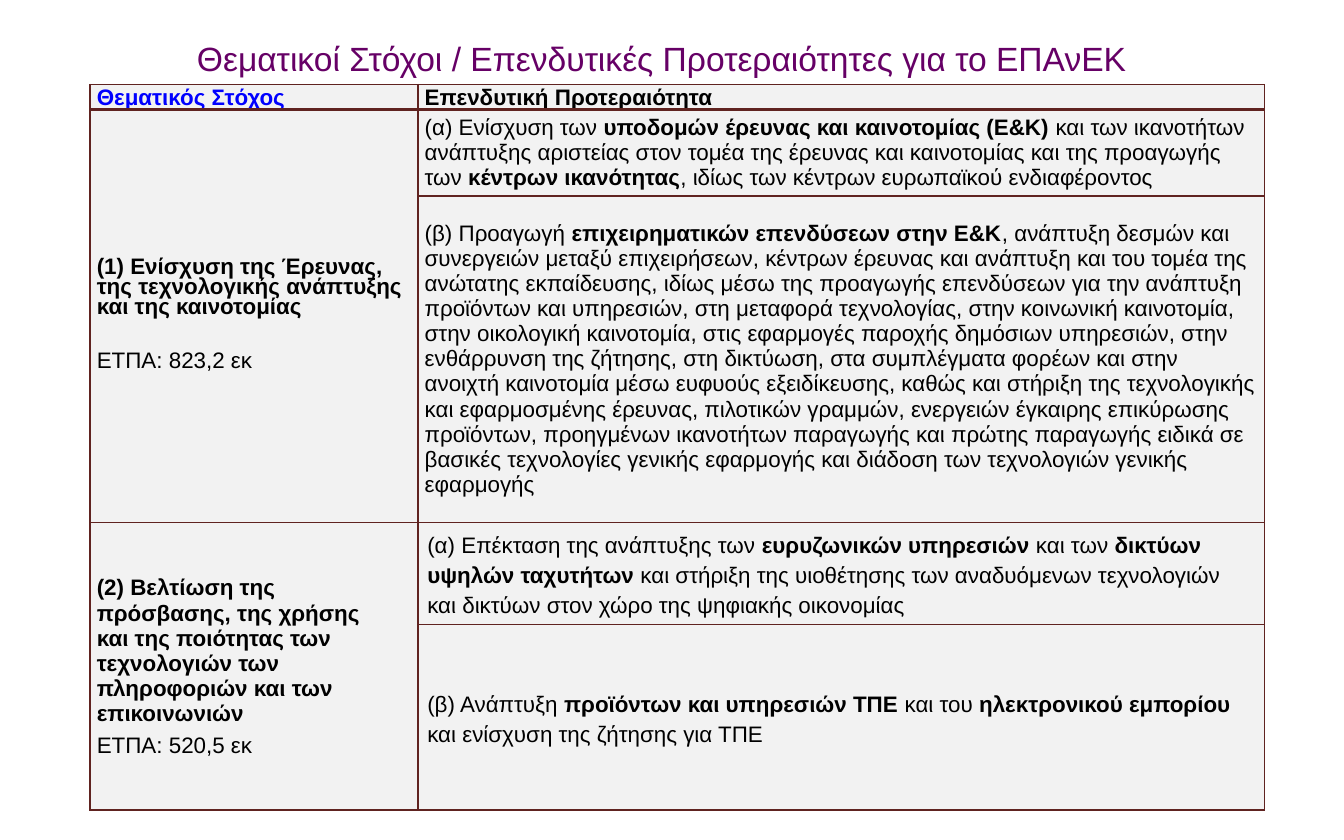
"""Build a slide with a table of thematic objectives and investment priorities."""
from dataclasses import dataclass

from lxml.etree import SubElement
from pptx import Presentation
from pptx.dml.color import RGBColor
from pptx.enum.text import MSO_ANCHOR as Anchor, MSO_AUTO_SIZE as AutoSize, PP_ALIGN as Align
from pptx.oxml.ns import qn
from pptx.util import Inches, Pt


@dataclass(frozen=True)
class Theme:
    font: str = "Arial"
    title: str = "660066"
    accent: str = "0000FF"
    text: str = "000000"
    cell: str = "F2F2F2"
    border: str = "602320"
    title_size: int = 18
    body_size: int = 12
    line: int = 1
    header_line: int = 2


THEME = Theme()
SLIDE_WIDTH, SLIDE_HEIGHT = 10, 6.25
TITLE_BOX = (0.51, 0.24, 8.83, 0.39)
TABLE_LEFT, TABLE_TOP = 0.67, 0.63
COLUMNS = (2.44, 6.3)
ROWS = (0.16, 0.64, 2.43, 0.76, 1.38)

TITLE = "Θεματικοί Στόχοι / Επενδυτικές Προτεραιότητες για το ΕΠΑνΕΚ"
HEADERS = (("**Θεματικός Στόχος**", THEME.accent), ("**Επενδυτική Προτεραιότητα**", THEME.text))

NORMAL = {"spacing": None, "before": 2, "after": 2}
TIGHT = {**NORMAL, "spacing": 0.7}
HEADING = {"spacing": 0.8, "before": 2, "after": 14}
LOOSE = {"spacing": 1.2, "before": 6, "after": 6}

OBJECTIVES = [
    {
        "goal": [
            ("**(1) Ενίσχυση της Έρευνας, της τεχνολογικής ανάπτυξης και της καινοτομίας**", HEADING),
            ("ΕΤΠΑ: 823,2 εκ", NORMAL),
        ],
        "priorities": [
            "(α) Ενίσχυση των **υποδομών έρευνας και καινοτομίας (Ε&Κ) **και των ικανοτήτων "
            "ανάπτυξης αριστείας στον τομέα της έρευνας και καινοτομίας και της προαγωγής των "
            "**κέντρων ικανότητας**, ιδίως των κέντρων ευρωπαϊκού ενδιαφέροντος",
            "(β) Προαγωγή **επιχειρηματικών επενδύσεων στην Ε&Κ**, ανάπτυξη δεσμών και "
            "συνεργειών μεταξύ επιχειρήσεων, κέντρων έρευνας και ανάπτυξη και του τομέα της "
            "ανώτατης εκπαίδευσης, ιδίως μέσω της προαγωγής επενδύσεων για την ανάπτυξη "
            "προϊόντων και υπηρεσιών, στη μεταφορά τεχνολογίας, στην κοινωνική καινοτομία, "
            "στην οικολογική καινοτομία, στις εφαρμογές παροχής δημόσιων υπηρεσιών, στην "
            "ενθάρρυνση της ζήτησης, στη δικτύωση, στα συμπλέγματα φορέων και στην "
            "ανοιχτή καινοτομία μέσω ευφυούς εξειδίκευσης, καθώς και στήριξη της τεχνολογικής "
            "και εφαρμοσμένης έρευνας, πιλοτικών γραμμών, ενεργειών έγκαιρης επικύρωσης "
            "προϊόντων, προηγμένων ικανοτήτων παραγωγής και πρώτης παραγωγής ειδικά σε "
            "βασικές τεχνολογίες γενικής εφαρμογής και διάδοση των τεχνολογιών γενικής "
            "εφαρμογής",
        ],
        "style": NORMAL,
        "margin": 0.05,
    },
    {
        "goal": [
            ("**(2) Βελτίωση της**", NORMAL),
            ("**πρόσβασης, της χρήσης**", TIGHT),
            ("**και της ποιότητας των**", TIGHT),
            ("**τεχνολογιών των**", TIGHT),
            ("**πληροφοριών και των**", TIGHT),
            ("**επικοινωνιών**", TIGHT),
            ("ΕΤΠΑ: 520,5 εκ", NORMAL),
        ],
        "priorities": [
            "(α) Επέκταση της ανάπτυξης των **ευρυζωνικών υπηρεσιών **και των **δικτύων "
            "υψηλών ταχυτήτων **και στήριξη της υιοθέτησης των αναδυόμενων τεχνολογιών "
            "και δικτύων στον χώρο της ψηφιακής οικονομίας",
            "(β) Ανάπτυξη **προϊόντων και υπηρεσιών ΤΠΕ **και του **ηλεκτρονικού εμπορίου **"
            "και ενίσχυση της ζήτησης για ΤΠΕ",
        ],
        "style": LOOSE,
        "margin": 0.07,
    },
]


def add_runs(paragraph, marked, size, color):
    """Add runs, with bold between pairs of double asterisks."""
    for index, words in enumerate(marked.split("**")):
        if words:
            run = paragraph.add_run()
            run.text = words
            run.font.name, run.font.size = THEME.font, Pt(size)
            run.font.bold = index % 2 == 1
            run.font.color.rgb = RGBColor.from_string(color)


def fill_cell(cell, paragraphs, margin=0.05, color=THEME.text):
    """Write styled paragraphs into a cell."""
    cell.vertical_anchor = Anchor.MIDDLE
    cell.margin_left = cell.margin_right = Inches(margin)
    cell.margin_top = cell.margin_bottom = 0
    frame = cell.text_frame
    for index, (marked, style) in enumerate(paragraphs):
        paragraph = frame.add_paragraph() if index else frame.paragraphs[0]
        paragraph.line_spacing = style["spacing"]
        paragraph.space_before = Pt(style["before"])
        paragraph.space_after = Pt(style["after"])
        add_runs(paragraph, marked, THEME.body_size, color)


def paint_cell(cell, top, bottom):
    """Give a cell its borders and fill."""
    properties = cell._tc.get_or_add_tcPr()
    widths = {"a:lnL": THEME.line, "a:lnR": THEME.line, "a:lnT": top, "a:lnB": bottom}
    for tag, width in widths.items():
        line = SubElement(properties, qn(tag), w=str(Pt(width)))
        SubElement(SubElement(line, qn("a:solidFill")), qn("a:srgbClr"), val=THEME.border)
    cell.fill.solid()
    cell.fill.fore_color.rgb = RGBColor.from_string(THEME.cell)


def add_title(slide):
    """Place and format the title."""
    title = slide.shapes.title
    title.left, title.top, title.width, title.height = map(Inches, TITLE_BOX)
    frame = title.text_frame
    frame.auto_size, frame.word_wrap = AutoSize.NONE, True
    frame.vertical_anchor = Anchor.MIDDLE
    frame.margin_left = frame.margin_right = frame.margin_top = frame.margin_bottom = 0
    frame.paragraphs[0].alignment = Align.CENTER
    add_runs(frame.paragraphs[0], TITLE, THEME.title_size, THEME.title)


def add_objectives(slide):
    """Add the table, with each goal spanning its priorities."""
    box = map(Inches, (TABLE_LEFT, TABLE_TOP, sum(COLUMNS), sum(ROWS)))
    table = slide.shapes.add_table(len(ROWS), len(COLUMNS), *box).table
    for column, width in zip(table.columns, COLUMNS):
        column.width = Inches(width)
    for row, height in zip(table.rows, ROWS):
        row.height = Inches(height)

    for index in range(len(ROWS)):
        top = THEME.header_line if index == 1 else THEME.line
        bottom = THEME.header_line if index == 0 else THEME.line
        for cell in table.rows[index].cells:
            paint_cell(cell, top, bottom)

    for column, (label, color) in enumerate(HEADERS):
        fill_cell(table.cell(0, column), [(label, NORMAL)], color=color)
    first = 1
    for objective in OBJECTIVES:
        priorities = objective["priorities"]
        goal = table.cell(first, 0)
        goal.merge(table.cell(first + len(priorities) - 1, 0))
        fill_cell(goal, objective["goal"])
        for row, priority in enumerate(priorities, first):
            fill_cell(table.cell(row, 1), [(priority, objective["style"])], objective["margin"])
        first += len(priorities)


def main():
    """Create and save the presentation."""
    deck = Presentation()
    deck.slide_width, deck.slide_height = Inches(SLIDE_WIDTH), Inches(SLIDE_HEIGHT)
    slide = deck.slides.add_slide(deck.slide_layouts.get_by_name("Title Only"))
    add_title(slide)
    add_objectives(slide)
    deck.save("out.pptx")


if __name__ == "__main__":
    main()
